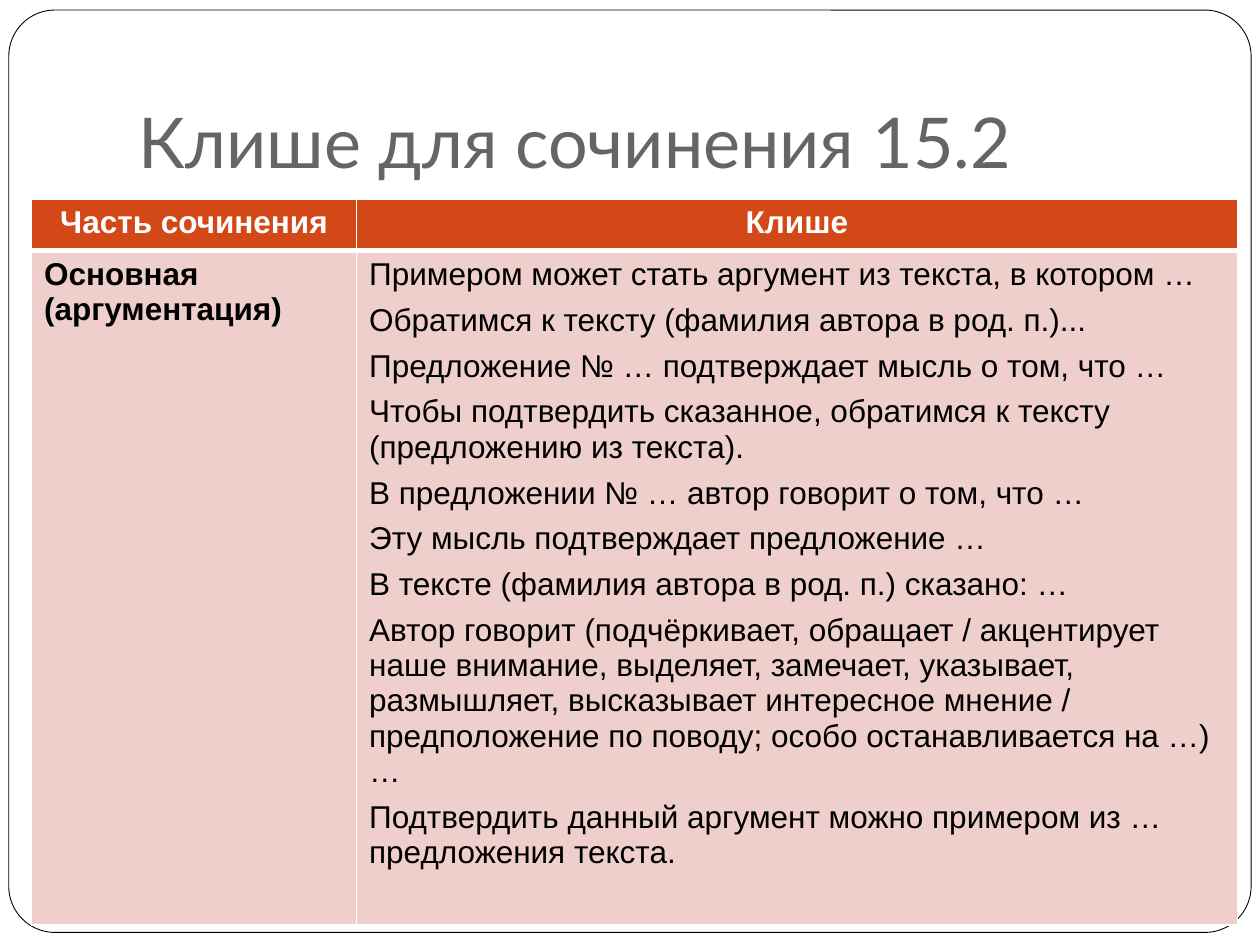
from lxml import etree
from pptx import Presentation
from pptx.dml.color import RGBColor
from pptx.enum.shapes import MSO_SHAPE
from pptx.enum.text import MSO_ANCHOR, PP_ALIGN
from pptx.oxml.ns import qn
from pptx.util import Inches, Pt

WHITE = RGBColor(0xFF, 0xFF, 0xFF)
BLACK = RGBColor(0, 0, 0)
GREY = RGBColor(0x69, 0x64, 0x64)
ORANGE = RGBColor(0xD3, 0x48, 0x17)
PINK = RGBColor(0xEF, 0xCF, 0xCC)

HEADERS = ["Часть сочинения", "Клише"]
ESSAY_PART = "Основная \v(аргументация)"
CLICHES = [
    "Примером может стать аргумент из текста, в котором …",
    "Обратимся к тексту (фамилия автора в род. п.)...",
    "Предложение № … подтверждает мысль о том, что …",
    "Чтобы подтвердить сказанное, обратимся к тексту (предложению из текста).",
    "В предложении № … автор говорит о том, что …",
    "Эту мысль подтверждает предложение …",
    "В тексте (фамилия автора в род. п.) сказано: …",
    "Автор говорит (подчёркивает, обращает / акцентирует наше внимание, "
    "выделяет, замечает, указывает, размышляет, высказывает интересное мнение / "
    "предположение по поводу; особо останавливается на …) …",
    "Подтвердить данный аргумент можно примером из … предложения текста.",
]


def set_borders(cell, widths):
    """Draw white cell borders; widths are points for left, right, top, bottom."""
    properties = cell._tc.get_or_add_tcPr()
    for index, (side, width) in enumerate(zip("LRTB", widths)):
        border = etree.Element(qn(f"a:ln{side}"), w=str(Pt(width)))
        fill = etree.SubElement(border, qn("a:solidFill"))
        etree.SubElement(fill, qn("a:srgbClr"), val=str(WHITE))
        properties.insert(index, border)


def format_font(font, name, size, color, bold=False):
    font.name = name
    font.size = Pt(size)
    font.bold = bold
    font.color.rgb = color


prs = Presentation()
prs.slide_width, prs.slide_height = Inches(10), Inches(7.5)
slide = prs.slides.add_slide(prs.slide_layouts[5])

# Rounded frame behind everything
frame = slide.shapes.add_shape(
    MSO_SHAPE.ROUNDED_RECTANGLE, Inches(0.07), Inches(0.08), Inches(9.86), Inches(7.32))
frame.adjustments[0] = 0.05
frame.shadow.inherit = False
frame.fill.solid()
frame.fill.fore_color.rgb = WHITE
frame.line.color.rgb = BLACK
frame.line.width = Pt(0.5)
slide.shapes._spTree.insert(2, frame._element)

# Title
title = slide.shapes.title
title.left, title.top = Inches(1), Inches(0.3)
title.width, title.height = Inches(8.5), Inches(1.25)
title_text = title.text_frame
title_text.text = "Клише для сочинения 15.2"
title_text.vertical_anchor = MSO_ANCHOR.BOTTOM
title_text.margin_bottom = Inches(0.1)
title_text.paragraphs[0].alignment = PP_ALIGN.LEFT
format_font(title_text.paragraphs[0].runs[0].font, "Lato", 40, GREY)

# Table of clichés
table = slide.shapes.add_table(
    2, 2, Inches(0.25), Inches(1.58), Inches(9.57), Inches(5.76)).table
for column, width in zip(table.columns, [2.58, 6.99]):
    column.width = Inches(width)
for row, height in zip(table.rows, [0.41, 5.35]):
    row.height = Inches(height)

contents = [HEADERS, [ESSAY_PART, "\n".join(CLICHES)]]
for r, row_texts in enumerate(contents):
    is_header = r == 0
    for c, text in enumerate(row_texts):
        is_cliche_list = not is_header and c == 1
        cell = table.cell(r, c)
        cell.fill.solid()
        cell.fill.fore_color.rgb = ORANGE if is_header else PINK
        set_borders(cell, [1, 1, 1, 3] if is_header else [1, 1, 3, 1])
        cell.text_frame.text = text
        for paragraph in cell.text_frame.paragraphs:
            paragraph.alignment = PP_ALIGN.CENTER if is_header else PP_ALIGN.LEFT
            if is_cliche_list:
                paragraph.space_after = Pt(6)
            for run in paragraph.runs:
                format_font(run.font, "Arial", 18, WHITE if is_header else BLACK,
                            bold=not is_cliche_list)

prs.save("out.pptx")
